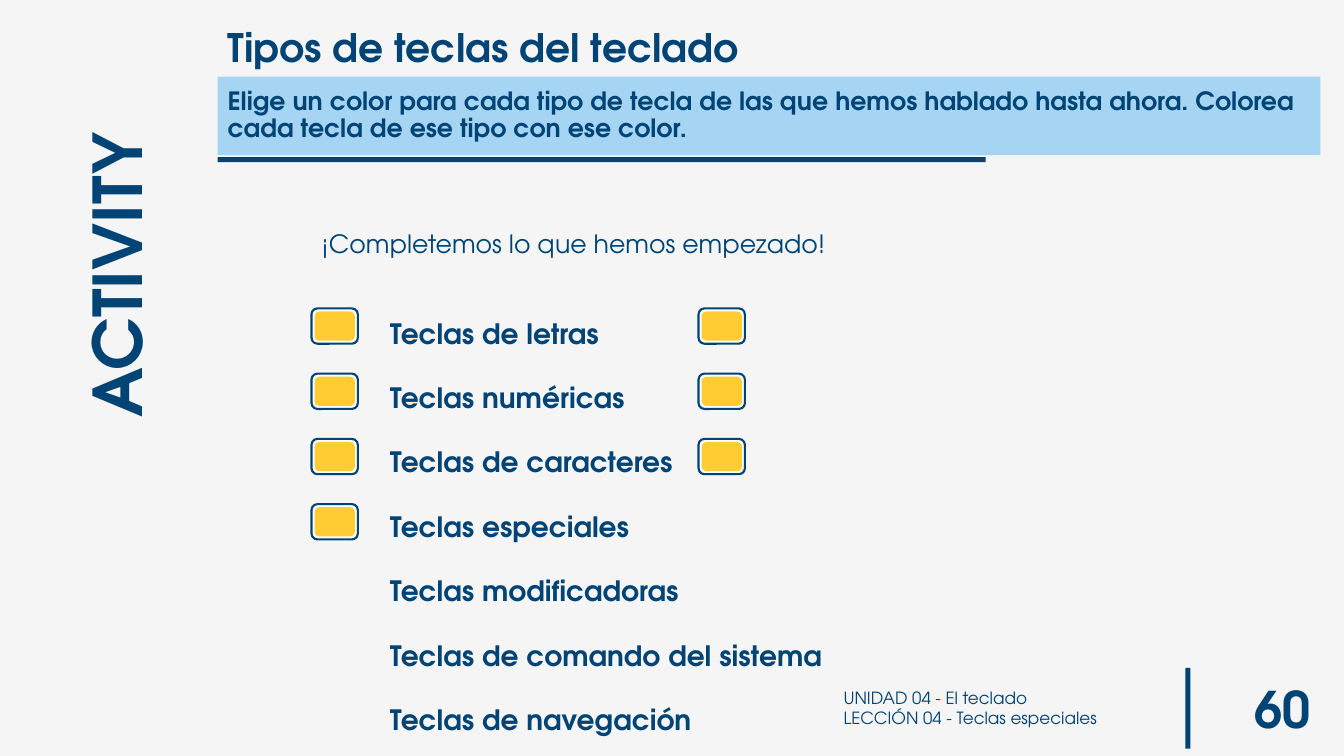
import pptx
import pptx.dml.color
import pptx.enum.shapes
import pptx.enum.text
import pptx.util

NAVY, SKY, YELLOW, WHITE, PALE = "004375", "A6D5F4", "FFCC34", "FFFFFF", "F5F5F5"
FONT = "TeX Gyre Adventor"
SHAPE = pptx.enum.shapes.MSO_SHAPE
ANCHOR = pptx.enum.text.MSO_ANCHOR
ALIGN = pptx.enum.text.PP_ALIGN

KEY_TYPES = [
    "Teclas de letras",
    "Teclas numéricas",
    "Teclas de caracteres",
    "Teclas especiales",
    "Teclas modificadoras",
    "Teclas de comando del sistema",
    "Teclas de navegación",
]

prs = pptx.Presentation()
prs.slide_width = pptx.util.Inches(13.333)
prs.slide_height = pptx.util.Inches(7.5)


def rgb(color):
    return pptx.dml.color.RGBColor.from_string(color)


def emu(x, y, w, h):
    """Turn percentages of the slide's width and height into lengths."""
    col, row = prs.slide_width / 100, prs.slide_height / 100
    return [round(n) for n in (x * col, y * row, w * col, h * row)]


def add_block(s, box, fill, kind=SHAPE.RECTANGLE, line=None):
    sp = s.shapes.add_shape(kind, *emu(*box))
    sp.shadow.inherit = False
    sp.fill.solid()
    sp.fill.fore_color.rgb = rgb(fill)
    if line:
        sp.line.color.rgb = rgb(line)
        sp.line.width = pptx.util.Pt(1.5)
    else:
        sp.line.fill.background()
    return sp


def write(sp, *lines, size, bold=False, align=ALIGN.LEFT, anchor=ANCHOR.TOP,
          spacing=1.0, before=0):
    tf = sp.text_frame
    tf.word_wrap = True
    tf.auto_size = pptx.enum.text.MSO_AUTO_SIZE.NONE
    tf.vertical_anchor = anchor
    for i, text in enumerate(lines):
        p = tf.add_paragraph() if i else tf.paragraphs[0]
        p.alignment = align
        p.line_spacing = spacing
        p.space_before = pptx.util.Pt(before if i else 0)
        r = p.add_run()
        r.text = text
        r.font.name = FONT
        r.font.size = pptx.util.Pt(size)
        r.font.bold = bold
        r.font.color.rgb = rgb(NAVY)


def add_text(s, box, *lines, **fmt):
    sp = s.shapes.add_textbox(*emu(*box))
    write(sp, *lines, **fmt)
    return sp


def add_side_label(s, box):
    add_text(s, box, "ACTIVITY", size=48, bold=True).rotation = 270


def add_header(s, x, y, w):
    title = s.shapes.title
    title.left, title.top, title.width, title.height = emu(x, y, 63.23, 7.6)
    write(title, "Tipos de teclas del teclado", size=28, bold=True)
    band = add_block(s, (x, y + 7.73, w, 10.4), SKY)
    write(band, "Elige un color para cada tipo de tecla de las que hemos hablado "
          "hasta ahora. Colorea cada tecla de ese tipo con ese color.",
          size=18, bold=True, anchor=ANCHOR.MIDDLE, spacing=0.9)
    add_block(s, (x, y + 18.4, 57.15, 0.67), NAVY)


def add_key(s, x, y):
    w, h, dx, dy = 3.45, 4.67, 0.23, 0.4
    add_block(s, (x, y, w, h), WHITE, SHAPE.ROUNDED_RECTANGLE, NAVY)
    add_block(s, (x + dx, y + dy, w - 2 * dx, h - 2 * dy), YELLOW,
              SHAPE.ROUNDED_RECTANGLE)


def add_activity(s, x, y):
    add_text(s, (x, y, 51.83, 5.33), "¡Completemos lo que hemos empezado!", size=18)
    add_text(s, (x + 5.1, y + 9.33, 59.03, 32.27), *KEY_TYPES,
             size=20, bold=True, spacing=1.5, before=10)
    for offset, count in ((0, 4), (28.8, 3)):
        for row in range(count):
            add_key(s, x + offset, y + 11.2 + row * 8.63)


def add_footer(s, x, y, h):
    add_text(s, (x, y, 25.28, h), "UNIDAD 04 - El teclado",
             "LECCIÓN 04 - Teclas especiales", size=12, anchor=ANCHOR.MIDDLE)
    add_block(s, (x + 26.17, y - 0.93, 0.38, 10.67), NAVY)
    add_text(s, (x + 27.3, y, 8.93, h), "60", size=36, bold=True,
             align=ALIGN.RIGHT, anchor=ANCHOR.MIDDLE)


def main():
    s = prs.slides.add_slide(prs.slide_layouts[5])
    s.background.fill.solid()
    s.background.fill.fore_color.rgb = rgb(PALE)
    add_side_label(s, (-5.25, 25.73, 27.83, 12.13))
    add_header(s, 16.2, 2.4, 82.05)
    add_activity(s, 23.18, 29.6)
    add_footer(s, 62.03, 89.27, 8.8)
    prs.save("out.pptx")


if __name__ == "__main__":
    main()
